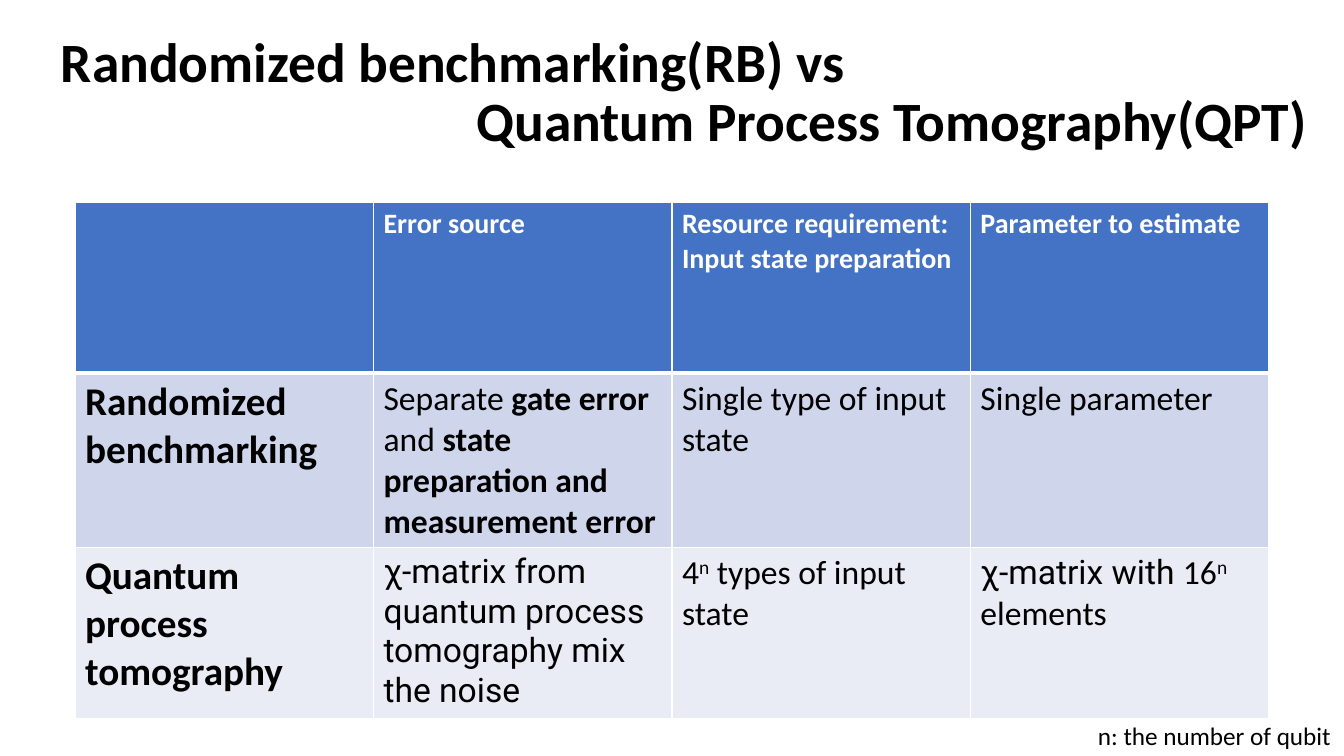
from pptx import Presentation
from pptx.dml.color import RGBColor
from pptx.enum.text import MSO_ANCHOR, PP_ALIGN
from pptx.oxml import parse_xml
from pptx.oxml.ns import nsdecls
from pptx.util import Emu, Pt

BODY, ALT = "Calibri", "Roboto"
BLACK, WHITE = "000000", "FFFFFF"
FILLS = ["4472C4", "CFD5EA", "E9EBF5"]
BOLD, ROBOTO, SUPER = {"bold": True}, {"name": ALT}, {"super": True}

TITLE = [("Randomized benchmarking(RB) vs", PP_ALIGN.LEFT),
         ("Quantum Process Tomography(QPT)", PP_ALIGN.RIGHT)]
NOTE = "n: the number of qubit"
HEADERS = [
    [],
    [[("Error source", {})]],
    [[("Resource requirement:", {})], [("Input state preparation", {})]],
    [[("Parameter to estimate", {})]],
]
RB = [
    [[("Randomized benchmarking", {})]],
    [[("Separate ", {}), ("gate error ", BOLD), ("and ", {}),
      ("state preparation and measurement error", BOLD)]],
    [[("Single type of input state", {})]],
    [[("Single parameter", {})]],
]
QPT = [
    [[("Quantum process tomography", {})]],
    [[("χ-matrix from quantum process tomography mix the noise", ROBOTO)]],
    [[("4", {}), ("n", SUPER), (" types of input state", {})]],
    [[("χ-matrix with ", ROBOTO), ("16", {}), ("n ", SUPER), ("elements", {})]],
]


def px(n):
    """Turn pixels into EMU."""
    return Emu(round(n * 914400 / 100.8))


def rgb(value):
    """Turn a hex string into a colour."""
    return RGBColor.from_string(value)


def write(p, runs, size, color=BLACK, bold=False):
    """Fill a paragraph with runs, each with its own differences."""
    f = p.font
    f.name, f.size, f.bold = BODY, Pt(size), bold
    f.color.rgb = rgb(color)
    for text, style in runs:
        r = p.add_run()
        r.text = text
        r.font.size = Pt(size)
        r.font.name = style.get("name", BODY)
        r.font.bold = style.get("bold", bold)
        r.font.color.rgb = rgb(color)
        if style.get("super"):
            r.font._element.set("baseline", "30000")


def add_text(s, x, y, w, h, lines, size, bold=False, wrap=True):
    """Add a text box with one aligned paragraph per line."""
    tf = s.shapes.add_textbox(px(x), px(y), px(w), px(h)).text_frame
    tf.word_wrap = wrap
    tf.vertical_anchor = MSO_ANCHOR.MIDDLE
    for i, (text, align) in enumerate(lines):
        p = tf.add_paragraph() if i else tf.paragraphs[0]
        p.alignment = align
        if len(lines) > 1:
            p.line_spacing = 0.9
        write(p, [(text, {})], size, bold=bold)


def set_borders(cell, **widths):
    """Give a cell white borders with widths in points."""
    tc_pr = cell._tc.get_or_add_tcPr()
    for side, width in widths.items():
        tc_pr.append(parse_xml(
            f'<a:ln{side} {nsdecls("a")} w="{Pt(width)}"><a:solidFill>'
            f'<a:srgbClr val="{WHITE}"/></a:solidFill></a:ln{side}>'))


def fill_cell(cell, paragraphs, row, col):
    """Style a table cell by its row and column and write its text."""
    set_borders(cell, L=1, R=1, T=3 if row == 1 else 1, B=1 if row else 3)
    cell.fill.solid()
    cell.fill.fore_color.rgb = rgb(FILLS[row])
    size = 20 if row == 0 else 24 if col else 28
    tf = cell.text_frame
    for i, runs in enumerate(paragraphs):
        p = tf.add_paragraph() if i else tf.paragraphs[0]
        write(p, runs, size, BLACK if row else WHITE, row == 0 or col == 0)


def add_comparison(s, x, y, w, h, rows):
    """Add the comparison table with equal columns and rows."""
    table = s.shapes.add_table(len(rows), len(rows[0]),
                               px(x), px(y), px(w), px(h)).table
    table.first_row = table.horz_banding = False
    for i, row in enumerate(rows):
        for j, paragraphs in enumerate(row):
            fill_cell(table.cell(i, j), paragraphs, i, j)


def main():
    """Build and save the slide."""
    prs = Presentation()
    prs.slide_width, prs.slide_height = px(1344), px(756)
    s = prs.slides.add_slide(prs.slide_layouts[6])
    add_comparison(s, 75, 202, 1194, 514, [HEADERS, RB, QPT])
    add_text(s, 1088, 715, 257, 40, [(NOTE, PP_ALIGN.LEFT)], 18, wrap=False)
    add_text(s, 51, 21, 1266, 146, TITLE, 39.6, bold=True)
    prs.save("out.pptx")


if __name__ == "__main__":
    main()
